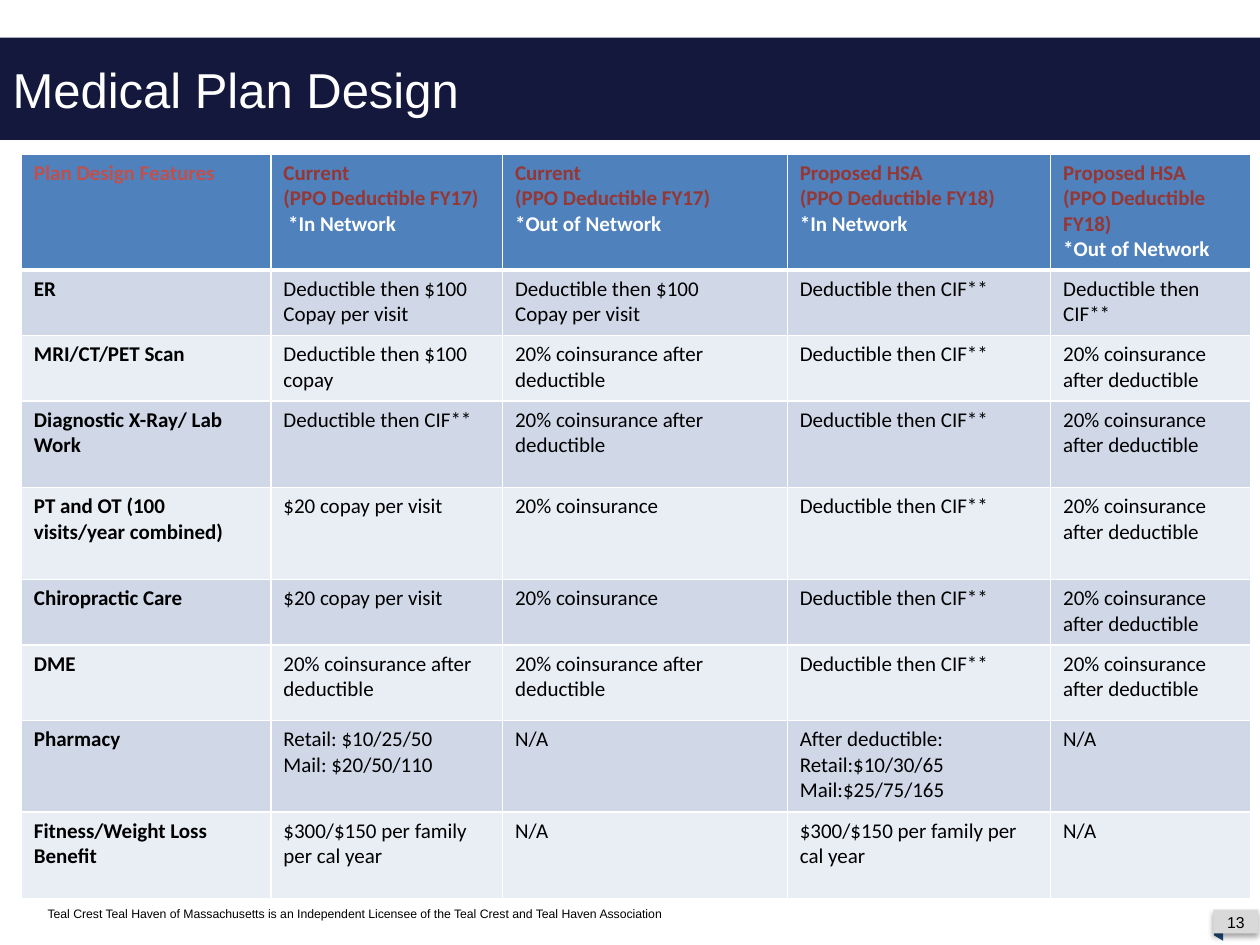
from lxml import etree
from pptx import Presentation
from pptx.dml.color import RGBColor
from pptx.enum.shapes import MSO_SHAPE
from pptx.enum.text import MSO_ANCHOR, MSO_AUTO_SIZE, PP_ALIGN
from pptx.oxml.ns import qn
from pptx.util import Cm, Pt

RECT, PARALLELOGRAM = MSO_SHAPE.RECTANGLE, MSO_SHAPE.PARALLELOGRAM
MIDDLE, TOP = MSO_ANCHOR.MIDDLE, MSO_ANCHOR.TOP
LEFT, CENTER = PP_ALIGN.LEFT, PP_ALIGN.CENTER

WHITE = RGBColor(0xFF, 0xFF, 0xFF)
BLACK = RGBColor(0, 0, 0)
NAVY = RGBColor(0x13, 0x18, 0x3C)
FOLD_BLUE = RGBColor(0x1F, 0x49, 0x7D)
TAB_GRAY = RGBColor(0xD9, 0xD9, 0xD9)
HEADER_BLUE = RGBColor(0x4F, 0x81, 0xBD)
RED = RGBColor(0xC0, 0x50, 0x4D)
DARK_RED = RGBColor(0x95, 0x37, 0x35)
BAND_DARK = RGBColor(0xD0, 0xD8, 0xE8)
BAND_LIGHT = RGBColor(0xE9, 0xED, 0xF4)

COL_WIDTHS = [5.03, 4.67, 5.74, 5.31, 4.04]
ROW_HEIGHTS = [2.34, 1.32, 1.32, 1.75, 1.85, 1.32, 1.52, 1.85, 1.75]

CURRENT = "Current\n(PPO Deductible FY17)\n"
PROPOSED = "Proposed HSA\n(PPO Deductible FY18)\n"
ER_COPAY = "Deductible then $100\nCopay per visit"
CIF = "Deductible then CIF**"
COINSURANCE = "20% coinsurance"
AFTER = "20% coinsurance after deductible"
FITNESS = "$300/$150 per family per cal year"

ROWS = [
    ["Plan Design Features", CURRENT + " *In Network", CURRENT + "*Out of Network",
     PROPOSED + "*In Network", PROPOSED + "*Out of Network"],
    ["ER", ER_COPAY, ER_COPAY, CIF, CIF],
    ["MRI/CT/PET Scan", "Deductible then $100 copay", AFTER, CIF, AFTER],
    ["Diagnostic X-Ray/ Lab Work", CIF, AFTER, CIF, AFTER],
    ["PT and OT (100 visits/year combined)", "$20 copay per visit", COINSURANCE, CIF, AFTER],
    ["Chiropractic Care", "$20 copay per visit", COINSURANCE, CIF, AFTER],
    ["DME", AFTER, AFTER, CIF, AFTER],
    ["Pharmacy", "Retail: $10/25/50\nMail: $20/50/110", "N/A",
     "After deductible:\nRetail:$10/30/65\nMail:$25/75/165", "N/A"],
    ["Fitness/Weight Loss Benefit", FITNESS, "N/A", FITNESS, "N/A"],
]


def add_run(p, text, size, color, font="Arial", bold=False):
    r = p.add_run()
    r.text = text
    r.font.size = Pt(size)
    r.font.name = font
    r.font.bold = bold
    r.font.color.rgb = color


def add_text(s, box, text, size, align=LEFT, anchor=TOP):
    tf = s.shapes.add_textbox(*map(Cm, box)).text_frame
    tf.word_wrap = True
    tf.vertical_anchor = anchor
    p = tf.paragraphs[0]
    p.alignment = align
    add_run(p, text, size, BLACK)


def add_filled(s, kind, box, color):
    sp = s.shapes.add_shape(kind, *map(Cm, box))
    sp.shadow.inherit = False
    sp.fill.solid()
    sp.fill.fore_color.rgb = color
    sp.line.fill.background()
    return sp


def add_drop_shadow(sp):
    effects = sp._element.spPr.find(qn("a:effectLst"))
    shadow = etree.SubElement(effects, qn("a:outerShdw"), blurRad=str(Pt(3.1)),
                              dist=str(Pt(1.8)), dir="5400000", rotWithShape="0")
    color = etree.SubElement(shadow, qn("a:srgbClr"), val=str(BLACK))
    etree.SubElement(color, qn("a:alpha"), val="35000")


def set_borders(cell, top, bottom):
    """White cell borders; they must come before the fill in tcPr."""
    tcPr = cell._tc.get_or_add_tcPr()
    for i, (side, width) in enumerate(zip("LRTB", (1, 1, top, bottom))):
        ln = etree.Element(qn("a:ln" + side), w=str(Pt(width)))
        fill = etree.SubElement(ln, qn("a:solidFill"))
        etree.SubElement(fill, qn("a:srgbClr"), val=str(WHITE))
        tcPr.insert(i, ln)


def text_color(row, col, line):
    if row > 0:
        return BLACK
    if col == 0:
        return RED
    return WHITE if line == 2 else DARK_RED


def fill_cell(cell, row, col):
    cell.fill.solid()
    band = BAND_DARK if row % 2 else BAND_LIGHT
    cell.fill.fore_color.rgb = band if row else HEADER_BLUE
    set_borders(cell, top=3 if row == 1 else 1, bottom=1 if row else 3)
    tf = cell.text_frame
    for i, line in enumerate(ROWS[row][col].split("\n")):
        p = tf.add_paragraph() if i else tf.paragraphs[0]
        add_run(p, line, 12, text_color(row, col, i), "Calibri", row == 0 or col == 0)


def add_plan_table(s):
    table = s.shapes.add_table(len(ROWS), len(COL_WIDTHS), Cm(0.43), Cm(3.1),
                               Cm(sum(COL_WIDTHS)), Cm(sum(ROW_HEIGHTS))).table
    for column, width in zip(table.columns, COL_WIDTHS):
        column.width = Cm(width)
    for row, height in enumerate(ROW_HEIGHTS):
        table.rows[row].height = Cm(height)
        for col in range(len(COL_WIDTHS)):
            fill_cell(table.cell(row, col), row, col)


def set_title(s, text):
    title = s.shapes.title
    title.left, title.top, title.width, title.height = map(Cm, (0, 0.76, 25.4, 2.06))
    title.fill.solid()
    title.fill.fore_color.rgb = NAVY
    tf = title.text_frame
    tf.auto_size = MSO_AUTO_SIZE.NONE
    tf.vertical_anchor = MIDDLE
    p = tf.paragraphs[0]
    p.alignment = LEFT
    add_run(p, text, 28, WHITE)


def add_page_tab(s, number):
    fold = add_filled(s, PARALLELOGRAM, (24.31, 18.62, 0.51, 0.18), FOLD_BLUE)
    fold.rotation = 90
    fold.adjustments[0] = 0.6
    add_drop_shadow(add_filled(s, RECT, (24.46, 18.34, 0.91, 0.48), TAB_GRAY))
    add_text(s, (24.43, 18.36, 0.97, 0.46), number, 9, CENTER, MIDDLE)


def main():
    prs = Presentation()
    prs.slide_width, prs.slide_height = Cm(25.4), Cm(19.05)
    s = prs.slides.add_slide(prs.slide_layouts[5])
    set_title(s, "Medical Plan Design")
    add_text(s, (0.71, 18.14, 14.12, 0.56),
             "Teal Crest Teal Haven of Massachusetts is an Independent Licensee "
             "of the Teal Crest and Teal Haven Association", 7)
    add_page_tab(s, "13")
    add_plan_table(s)
    prs.save("out.pptx")


if __name__ == "__main__":
    main()
